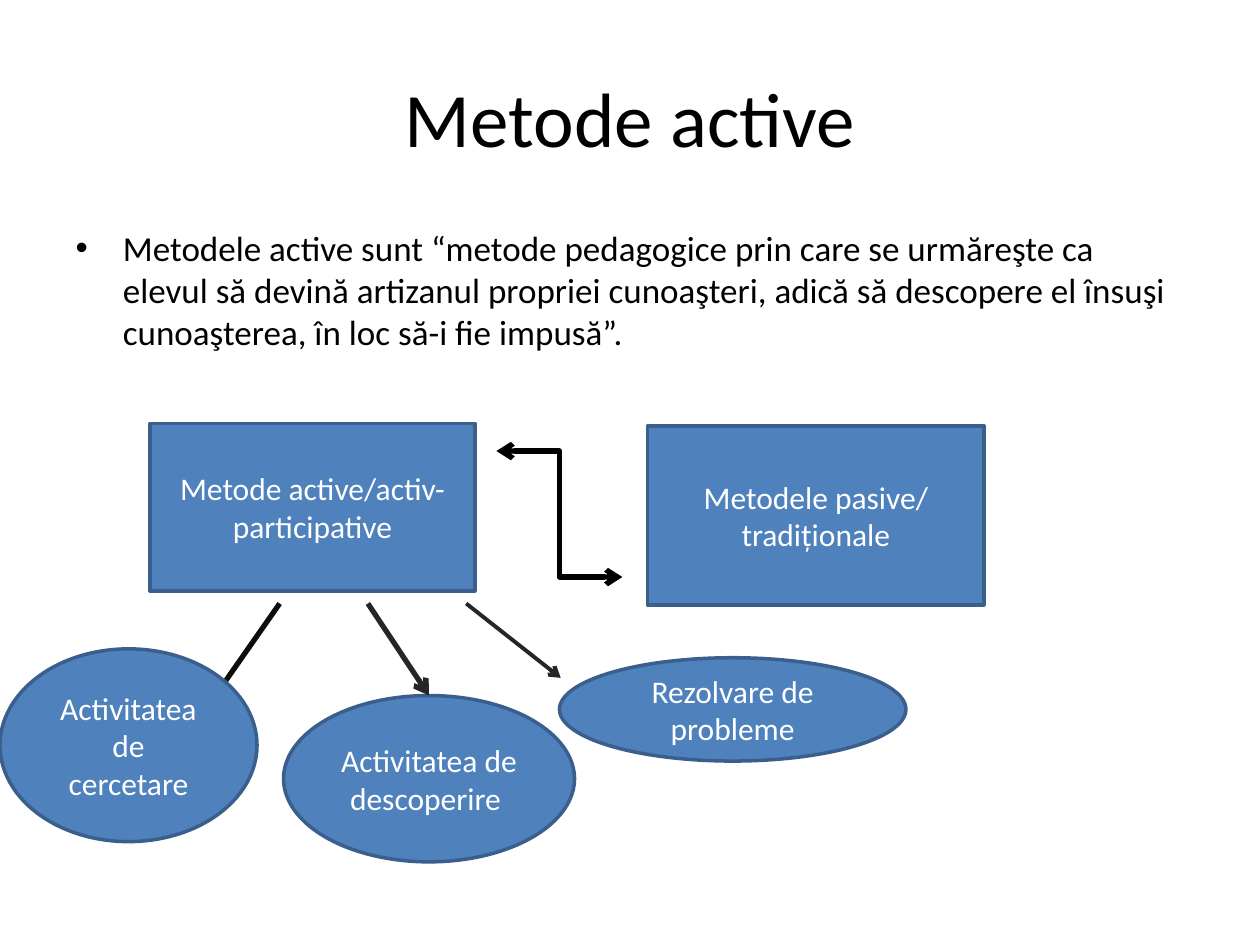
import dataclasses

import pptx
import pptx.dml.color
import pptx.enum.shapes
import pptx.enum.text
import pptx.oxml
import pptx.oxml.ns
import pptx.util

SHAPE = pptx.enum.shapes.MSO_SHAPE
CONNECTOR = pptx.enum.shapes.MSO_CONNECTOR
ALIGN = pptx.enum.text.PP_ALIGN
ANCHOR = pptx.enum.text.MSO_ANCHOR


@dataclasses.dataclass(frozen=True)
class Theme:
    font: str = "Calibri"
    ink: str = "000000"
    near_black: str = "0D0D0D"
    dark_grey: str = "262626"
    node_fill: str = "4F81BD"
    node_edge: str = "3A5F8C"
    node_text: str = "FFFFFF"
    title_size: int = 44
    body_size: int = 20
    node_size: int = 18
    edge_width: float = 2
    arrow_width: float = 3
    thin_arrow_width: float = 2.25


THEME = Theme()
WIDTH, HEIGHT = pptx.util.Inches(10), pptx.util.Inches(7.5)
COLUMNS, ROWS = 100, 75


def x(columns):
    return round(WIDTH * columns / COLUMNS)


def y(rows):
    return round(HEIGHT * rows / ROWS)


def rgb(value):
    return pptx.dml.color.RGBColor.from_string(value)


def apply(target, values):
    for name, value in values.items():
        setattr(target, name, value)


def write(frame, text, size, color, align):
    frame.text = text
    paragraph = frame.paragraphs[0]
    paragraph.alignment = align
    font = paragraph.runs[0].font
    apply(font, {"name": THEME.font, "size": pptx.util.Pt(size)})
    font.color.rgb = rgb(color)


def fill_placeholder(placeholder, box, text, size, align, anchor):
    left, top, width, height = box
    apply(placeholder, {"left": x(left), "top": y(top),
                        "width": x(width), "height": y(height)})
    write(placeholder.text_frame, text, size, THEME.ink, align)
    placeholder.text_frame.vertical_anchor = anchor


def add_node(slide, outline, box, text):
    left, top, width, height = box
    node = slide.shapes.add_shape(outline, x(left), y(top), x(width), y(height))
    node.shadow.inherit = False
    node.fill.solid()
    node.fill.fore_color.rgb = rgb(THEME.node_fill)
    node.line.color.rgb = rgb(THEME.node_edge)
    node.line.width = pptx.util.Pt(THEME.edge_width)
    apply(node.text_frame, {"word_wrap": True, "vertical_anchor": ANCHOR.MIDDLE})
    write(node.text_frame, text, THEME.node_size, THEME.node_text, ALIGN.CENTER)
    return node


def add_arrow(slide, start, end, color, width, kind=CONNECTOR.STRAIGHT, ends=("tailEnd",)):
    arrow = slide.shapes.add_connector(kind, x(start[0]), y(start[1]), x(end[0]), y(end[1]))
    arrow.line.color.rgb = rgb(color)
    arrow.line.width = pptx.util.Pt(width)
    namespace = pptx.oxml.ns.nsdecls("a")
    outline = arrow.line._get_or_add_ln()
    for end_tag in ends:
        outline.append(pptx.oxml.parse_xml(f'<a:{end_tag} {namespace} type="arrow"/>'))
    arrow._element.spPr.append(pptx.oxml.parse_xml(f"<a:effectLst {namespace}/>"))
    return arrow


def main():
    deck = pptx.Presentation()
    apply(deck, {"slide_width": WIDTH, "slide_height": HEIGHT})
    slide = deck.slides.add_slide(deck.slide_layouts[1])

    fill_placeholder(slide.shapes.title, (5, 3, 90, 12.5), "Metode active",
                     THEME.title_size, ALIGN.CENTER, ANCHOR.MIDDLE)
    fill_placeholder(
        slide.placeholders[1], (5, 17.5, 90, 49.5),
        "Metodele active sunt “metode pedagogice prin care se urmăreşte ca elevul să devină "
        "artizanul propriei cunoaşteri, adică să descopere el însuşi cunoaşterea, "
        "în loc să-i fie impusă”.",
        THEME.body_size, ALIGN.LEFT, ANCHOR.TOP)

    add_node(slide, SHAPE.RECTANGLE, (11.9, 33.6, 25.8, 13.3),
             "Metode active/activ-participative")
    add_arrow(slide, (39.4, 35.8), (49.4, 45.8), THEME.ink, THEME.arrow_width,
              CONNECTOR.ELBOW, ("headEnd", "tailEnd"))
    add_node(slide, SHAPE.RECTANGLE, (51.4, 33.8, 26.7, 14.2),
             "Metodele pasive/ tradiționale")

    branch_top = 47.9
    add_arrow(slide, (37, branch_top), (44.5, 53.8), THEME.dark_grey, THEME.thin_arrow_width)
    add_arrow(slide, (22.2, branch_top), (16.4, 56.2), THEME.near_black, THEME.arrow_width)
    add_node(slide, SHAPE.OVAL, (0, 51.5, 20.4, 15.3), "Activitatea de cercetare")
    discovery = add_node(slide, SHAPE.OVAL, (22.5, 55.2, 23.1, 13.2),
                         "Activitatea de descoperire ")
    add_node(slide, SHAPE.OVAL, (44.4, 52.2, 27.5, 8.2), "Rezolvare de probleme")
    discovery_arrow = add_arrow(slide, (29.2, branch_top), (34, 55.2),
                                THEME.dark_grey, THEME.arrow_width)
    discovery_arrow.end_connect(discovery, 0)

    deck.save("out.pptx")


if __name__ == "__main__":
    main()
